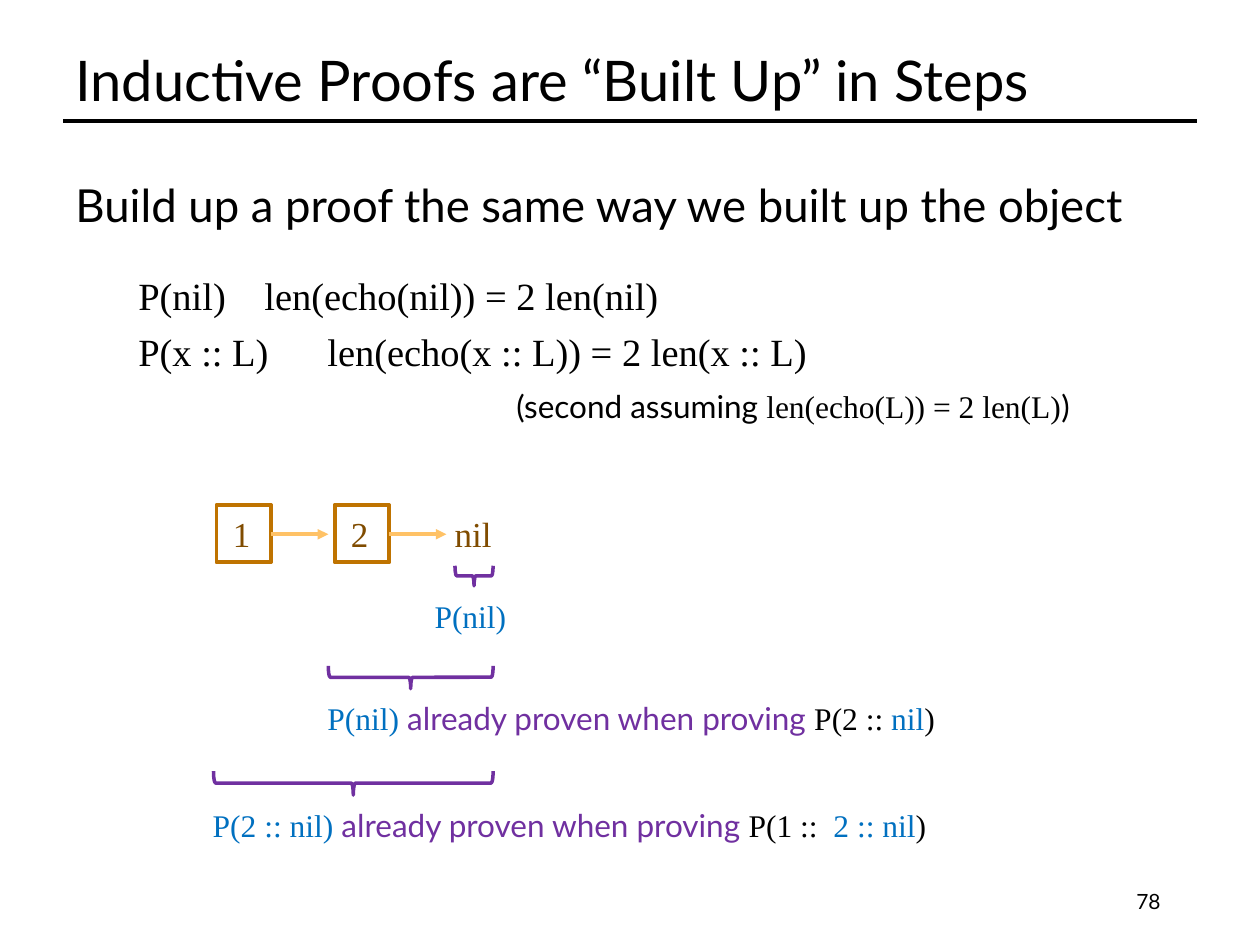
from lxml import etree
from pptx import Presentation
from pptx.dml.color import RGBColor
from pptx.enum.shapes import MSO_CONNECTOR, MSO_SHAPE
from pptx.enum.text import MSO_ANCHOR, PP_ALIGN
from pptx.oxml.ns import qn
from pptx.util import Pt

SANS, SERIF = "Lato", "Times New Roman"
BLACK, BLUE, PURPLE = "000000", "0070C0", "7030A0"
BROWN, ORANGE, PEACH = "804C00", "BF7300", "FFC266"

# A run is (text, font, size, colour).
TITLE = [("Inductive Proofs are “Built Up” in Steps", SANS, 32, BLACK)]
PAGE = [("78", SANS, 12, BLACK)]

# Body paragraphs: (indent, space before, runs)
BODY = [
    (0, 0, [("Build up a proof the same way we built up the object", SANS, 26, BLACK)]),
    (36, 23, [("P(nil)\tlen(echo(nil)) = 2 len(nil)", SERIF, 22, BLACK)]),
    (36, 5.5, [("P(x :: L)\tlen(echo(x :: L)) = 2 len(x :: L)", SERIF, 22, BLACK)]),
    (252, 7.5, [("(second assuming ", SANS, 18, BLACK),
                ("len(echo(L)) = 2 len(L)", SERIF, 18, BLACK),
                (")", SANS, 18, BLACK)]),
]
FORMULA_TAB = 216

# Linked list
NODES = ["1", "2"]
NODE_LEFT, NODE_TOP, NODE_W, NODE_H, NODE_STEP = 123.8, 288.7, 31, 32.4, 67.5
ARROW_Y, ARROW_LEN = 305.3, 32.8
NIL_BOX = (252.7, 289.4, 46, 31.7)

# Braces all end below nil: (left, top, depth, caption box, caption runs)
BRACE_RIGHT = 281.8
STEPS = [
    (260, 323.3, 11.5, (241.2, 337.7, 60, 28.8), [("P(nil)", SERIF, 18, BLUE)]),
    (187.6, 380.5, 13, (180, 396, 373, 28.8),
     [("P(nil)", SERIF, 18, BLUE),
      (" already proven when proving ", SANS, 18, PURPLE),
      ("P(2 :: ", SERIF, 18, BLACK),
      ("nil", SERIF, 18, BLUE),
      (")", SERIF, 18, BLACK)]),
    (122, 440.6, 13.7, (114.5, 457.2, 440, 28.8),
     [("P(2 :: nil)", SERIF, 18, BLUE),
      (" already proven when proving ", SANS, 18, PURPLE),
      ("P(1 ::  ", SERIF, 18, BLACK),
      ("2 :: nil", SERIF, 18, BLUE),
      (")", SERIF, 18, BLACK)]),
]

prs = Presentation()
prs.slide_width, prs.slide_height = Pt(720), Pt(540)
s = prs.slides.add_slide(prs.slide_layouts[6])


def rgb(value):
    return RGBColor.from_string(value)


def add_runs(p, runs):
    for text, font, size, color in runs:
        r = p.add_run()
        r.text = text
        for name, value in {"name": font, "size": Pt(size)}.items():
            setattr(r.font, name, value)
        r.font.color.rgb = rgb(color)


def add_text(box, runs=(), anchor=MSO_ANCHOR.TOP, align=PP_ALIGN.LEFT):
    tf = s.shapes.add_textbox(*map(Pt, box)).text_frame
    tf.word_wrap = True
    tf.vertical_anchor = anchor
    tf.paragraphs[0].alignment = align
    add_runs(tf.paragraphs[0], runs)
    return tf


def add_body(box):
    """Indented paragraphs whose formulas line up at one tab stop."""
    tf = add_text(box)
    for i, (indent, before, runs) in enumerate(BODY):
        p = tf.add_paragraph() if i else tf.paragraphs[0]
        p.space_before = Pt(before)
        add_runs(p, runs)
        pPr = p._p.get_or_add_pPr()
        pPr.set("marL", str(Pt(indent)))
        pPr.set("indent", "0")
        tabs = etree.SubElement(pPr, qn("a:tabLst"))
        etree.SubElement(tabs, qn("a:tab"), pos=str(Pt(FORMULA_TAB)), algn="l")


def add_outline(kind, box, color):
    sp = s.shapes.add_shape(kind, *map(Pt, box))
    sp.shadow.inherit = False
    sp.fill.background()
    sp.line.color.rgb = rgb(color)
    sp.line.width = Pt(2)
    return sp


def add_line(x1, x2, y, color, arrow=False):
    line = s.shapes.add_connector(MSO_CONNECTOR.STRAIGHT, Pt(x1), Pt(y), Pt(x2), Pt(y))
    line.line.color.rgb = rgb(color)
    line.line.width = Pt(2)
    if arrow:
        etree.SubElement(line.line._get_or_add_ln(), qn("a:tailEnd"), type="triangle")
    etree.SubElement(line._element.spPr, qn("a:effectLst"))


def add_brace(left, top, depth):
    """A left brace turned so that its tip points down."""
    span = BRACE_RIGHT - left
    x = (left + BRACE_RIGHT - depth) / 2
    y = top + (depth - span) / 2
    add_outline(MSO_SHAPE.LEFT_BRACE, (x, y, depth, span), PURPLE).rotation = 270


add_line(36, 684, 69.1, BLACK)
add_text((36, 21.6, 648, 47.5), TITLE, MSO_ANCHOR.MIDDLE)
add_body((36, 97.9, 648, 153.4))

for i, value in enumerate(NODES):
    left = NODE_LEFT + i * NODE_STEP
    frame = add_outline(MSO_SHAPE.FRAME, (left, NODE_TOP, NODE_W, NODE_H), ORANGE)
    frame.adjustments[0] = 0
    add_text((left + 2.2, 289.4, 28.8, 31.7), [(value, SERIF, 20, BROWN)])
    right = left + NODE_W
    add_line(right, right + ARROW_LEN, ARROW_Y, PEACH, arrow=True)
add_text(NIL_BOX, [("nil", SERIF, 20, BROWN)])

for left, top, depth, box, runs in STEPS:
    add_brace(left, top, depth)
    add_text(box, runs)

add_text((508.3, 500.4, 162, 28.8), PAGE, MSO_ANCHOR.MIDDLE, PP_ALIGN.RIGHT)

prs.save("out.pptx")
